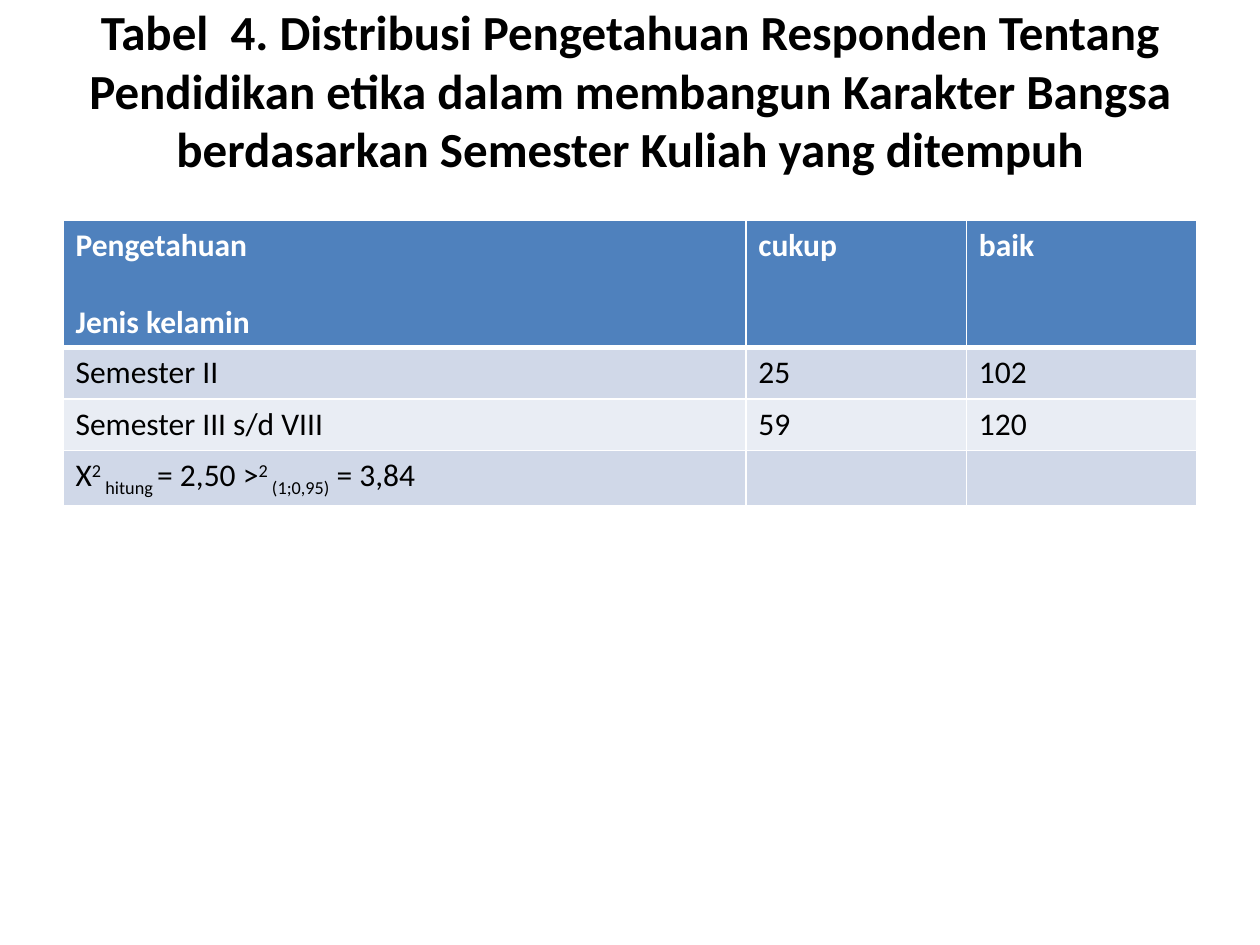
from dataclasses import dataclass

from lxml import etree
from pptx import Presentation
from pptx.dml.color import RGBColor
from pptx.enum.text import MSO_ANCHOR, PP_ALIGN
from pptx.oxml.ns import qn
from pptx.util import Inches, Pt

MIDDLE = MSO_ANCHOR.MIDDLE
CENTER = PP_ALIGN.CENTER


@dataclass(frozen=True)
class Theme:
    font: str = "Calibri"
    title_size: int = 28
    table_size: int = 18
    text: str = "000000"
    white: str = "FFFFFF"
    header: str = "4F81BD"
    band_dark: str = "D0D8E8"
    band_light: str = "E9EDF4"


theme = Theme()


def style_paragraph(paragraph, size, color, bold):
    paragraph.font.name = theme.font
    paragraph.font.size = Pt(size)
    paragraph.font.bold = bold
    paragraph.font.color.rgb = RGBColor.from_string(color)


def add_borders(cell, bottom_width):
    properties = cell._tc.get_or_add_tcPr()
    for side, width in (("L", 1), ("R", 1), ("T", 1), ("B", bottom_width)):
        line = etree.SubElement(properties, qn(f"a:ln{side}"), w=str(Pt(width)))
        fill = etree.SubElement(line, qn("a:solidFill"))
        etree.SubElement(fill, qn("a:srgbClr"), val=theme.white)


presentation = Presentation()
presentation.slide_width = Inches(10)
presentation.slide_height = Inches(7.5)
slide = presentation.slides.add_slide(presentation.slide_layouts[6])

# Title, raised within its box by the bottom margin
title = slide.shapes.add_textbox(Inches(0.5), Inches(0.3), Inches(9), Inches(1.25))
frame = title.text_frame
frame.word_wrap = True
frame.vertical_anchor = MIDDLE
frame.margin_bottom = Inches(0.48)
paragraph = frame.paragraphs[0]
paragraph.text = (
    "Tabel  4. Distribusi Pengetahuan Responden Tentang Pendidikan etika "
    "dalam membangun Karakter Bangsa berdasarkan Semester Kuliah yang ditempuh"
)
paragraph.alignment = CENTER
style_paragraph(paragraph, theme.title_size, theme.text, True)

# Table: each cell holds paragraphs, each paragraph holds (text, baseline) runs
test_result = [
    ("X", 0), ("2 ", 30), ("hitung ", -25), ("= 2,50 >", 0),
    ("2 ", 30), ("(1;0,95)", -25), (" = 3,84", 0),
]
rows = [
    [[[("Pengetahuan", 0)], [("Jenis kelamin", 0)]], [[("cukup", 0)]], [[("baik", 0)]]],
    [[[("Semester II", 0)]], [[("25", 0)]], [[("102", 0)]]],
    [[[("Semester III s/d VIII", 0)]], [[("59", 0)]], [[("120", 0)]]],
    [[test_result], [[]], [[]]],
]
column_widths = [5.42, 1.75, 1.83]
row_heights = [1, 0.41, 0.41, 0.41]

table = slide.shapes.add_table(
    len(rows), len(column_widths), Inches(0.5), Inches(1.75), Inches(9), Inches(2.22)
).table
for column, width in zip(table.columns, column_widths):
    column.width = Inches(width)
for row, height in zip(table.rows, row_heights):
    row.height = Inches(height)

for row_index, row in enumerate(rows):
    is_header = row_index == 0
    band = theme.band_dark if row_index % 2 else theme.band_light
    for column_index, paragraphs in enumerate(row):
        cell = table.cell(row_index, column_index)
        add_borders(cell, 3 if is_header else 1)
        cell.fill.solid()
        cell.fill.fore_color.rgb = RGBColor.from_string(theme.header if is_header else band)

        for index, runs in enumerate(paragraphs):
            frame = cell.text_frame
            paragraph = frame.add_paragraph() if index else frame.paragraphs[0]
            if index:
                paragraph.space_before = Pt(22)
            style_paragraph(
                paragraph, theme.table_size, theme.white if is_header else theme.text, is_header
            )
            for text, baseline in runs:
                run = paragraph.add_run()
                run.text = text
                if baseline:
                    run.font._element.set("baseline", str(baseline * 1000))

presentation.save("out.pptx")
